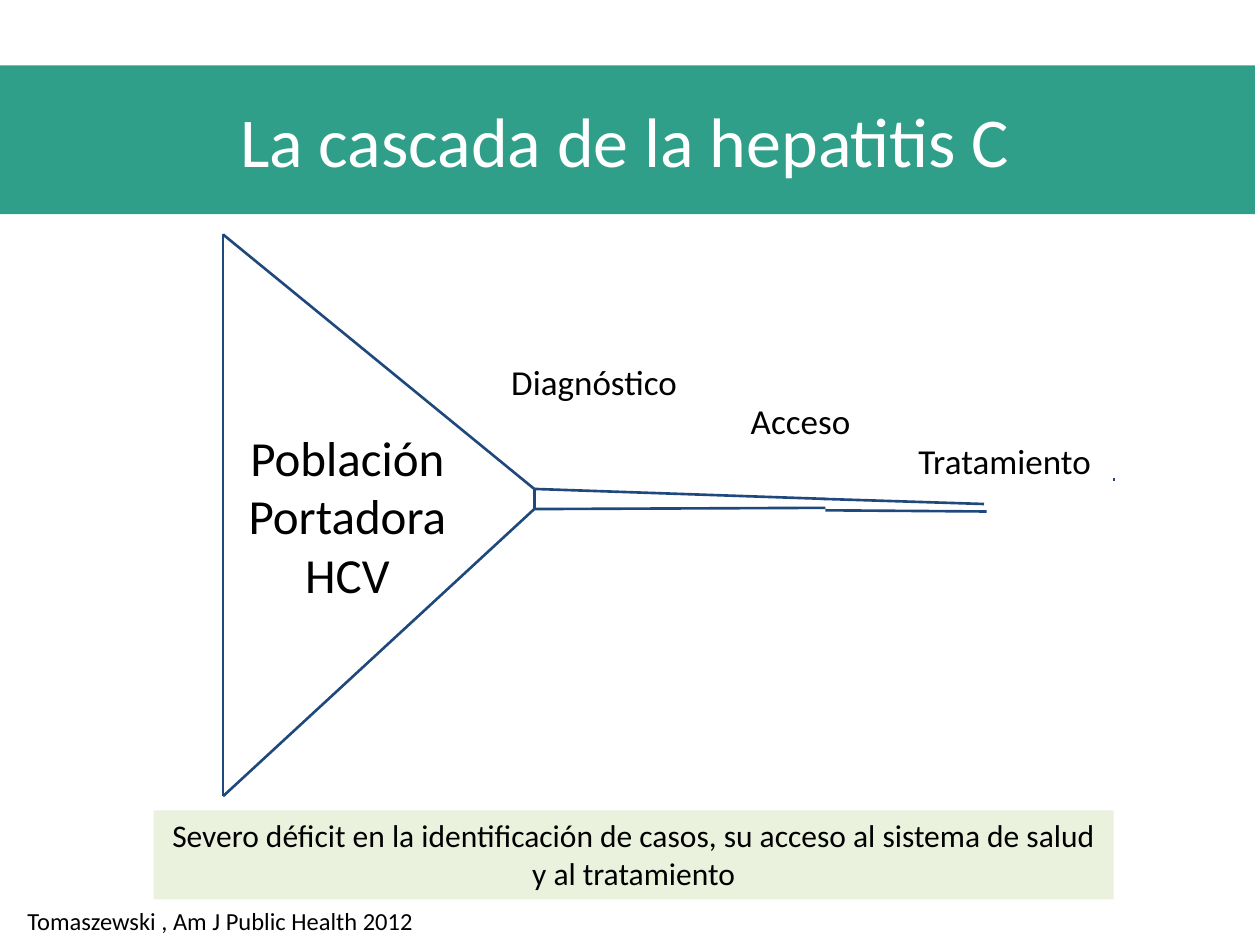
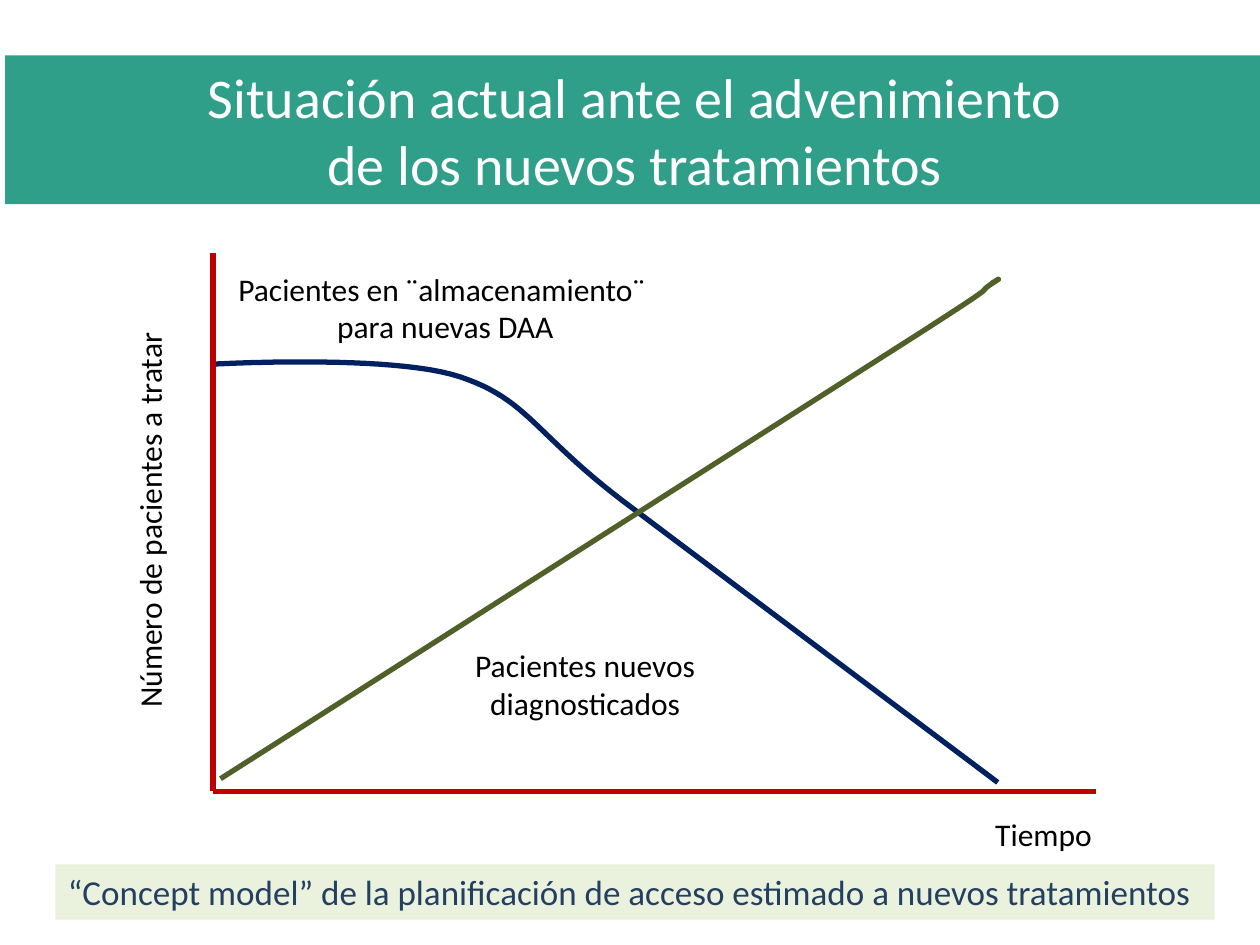
from dataclasses import dataclass

from lxml import etree
from pptx import Presentation
from pptx.dml.color import RGBColor
from pptx.enum.shapes import MSO_CONNECTOR, MSO_SHAPE
from pptx.enum.text import MSO_ANCHOR, MSO_AUTO_SIZE, PP_ALIGN
from pptx.oxml.ns import qn
from pptx.shapes.base import BaseShape
from pptx.slide import Slide
from pptx.util import Pt

LEFT, CENTER = PP_ALIGN.LEFT, PP_ALIGN.CENTER
TOP, MIDDLE = MSO_ANCHOR.TOP, MSO_ANCHOR.MIDDLE
NO_AUTOFIT = MSO_AUTO_SIZE.NONE
STRAIGHT = MSO_CONNECTOR.STRAIGHT
RECTANGLE = MSO_SHAPE.RECTANGLE

FONT = "Calibri"
COLORS = {
    "band": "2F9F8A",
    "panel": "EAF1DD",
    "white": "FFFFFF",
    "black": "000000",
    "funnel": "1F497D",
    "axis": "C00000",
    "stored": "002060",
    "diagnosed": "4F6128",
    "model": "244061",
}
TITLE_ONLY = 5
SLIDE_WIDTH, SLIDE_HEIGHT = 720, 540
BAND_HEIGHT = 85
CURVE_STEPS = 24

Point = tuple[float, float]
Cubic = tuple[Point, Point, Point]


@dataclass(frozen=True)
class Label:
    text: str
    left: float
    top: float
    width: float
    height: float
    size: float = 18
    color: str = "black"
    align: PP_ALIGN = CENTER
    rotation: float = 0
    panel: bool = False


@dataclass(frozen=True)
class Segment:
    start: Point
    end: Point
    color: str = "funnel"
    weight: float = 1.5


@dataclass(frozen=True)
class Curve:
    start: Point
    straight_to: Point
    cubics: tuple[Cubic, ...]
    color: str


WIDE_TOP, WIDE_BOTTOM = (127.5, 134), (127.5, 455)
NECK_TOP, NECK_BOTTOM = (305.3, 279.4), (305.3, 290.9)
FUNNEL = [
    Segment(WIDE_TOP, NECK_TOP),
    Segment(WIDE_BOTTOM, NECK_BOTTOM),
    Segment(WIDE_TOP, WIDE_BOTTOM),
    Segment(NECK_TOP, (471.6, 285.1)),
    Segment(NECK_BOTTOM, (471.6, 290.2)),
    Segment(NECK_TOP, NECK_BOTTOM),
    Segment((470.2, 285.1), (562.3, 288)),
    Segment((471.6, 291.6), (563.8, 292.3)),
    Segment((636.5, 272.9), (636.5, 275)),
]
CASCADE_LABELS = [
    Label("Diagnóstico", 268.6, 202.3, 141.8, 31.7, size=20),
    Label("Acceso", 415.4, 224.6, 84.2, 31.7, size=20),
    Label("Tratamiento", 517.7, 247.7, 113.8, 31.7, size=20, align=LEFT),
    Label("Población\nPortadora\nHCV", 134, 240.5, 129, 108.7, size=28),
    Label("Tomaszewski , Am J Public Health 2012", 8.6, 514, 344, 24.5, size=14, align=LEFT),
    Label(
        "Severo déficit en la identificación de casos, su acceso al sistema de salud\n"
        "y al tratamiento",
        87.8, 463, 548.6, 51, panel=True,
    ),
]

ORIGIN = (121.7, 452.2)
AXES = [
    Segment((ORIGIN[0], 144.7), ORIGIN, "axis", 3),
    Segment(ORIGIN, (626.4, ORIGIN[1]), "axis", 3),
]
CURVES = [
    Curve(
        (570.2, 447.1),
        (356.4, 286.6),
        (
            ((305.3, 247.7), (301.7, 228.2), (262.8, 215.3)),
            ((223.9, 202.3), (121.7, 208.1), (121.7, 208.1)),
        ),
        "stored",
    ),
    Curve(
        (126, 445),
        (506.9, 202.3),
        (
            ((580.3, 155.5), (555.8, 169.9), (565.9, 162.7)),
            ((576, 156.2), (566.6, 162), (566.6, 162)),
        ),
        "diagnosed",
    ),
]
MODEL_LABELS = [
    Label("Pacientes en ¨almacenamiento¨ \npara nuevas DAA", 127.4, 150.5, 254.2, 51),
    Label("Pacientes nuevos\ndiagnosticados", 263.5, 365.8, 141.8, 51),
    Label("Tiempo", 561.6, 462.2, 70.6, 28.8, align=LEFT),
    Label("Número de pacientes a tratar", -30.2, 281.5, 231.1, 28.8, align=LEFT, rotation=270),
    Label(
        "“Concept model” de la planificación de acceso estimado a nuevos tratamientos",
        31.7, 493.9, 662.4, 31.7, size=20, color="model", align=LEFT, panel=True,
    ),
]


def rgb(name: str) -> RGBColor:
    return RGBColor.from_string(COLORS[name])


def write_text(
    shape: BaseShape, text: str, *, size: float, color: str,
    align: PP_ALIGN = CENTER, anchor: MSO_ANCHOR = TOP,
) -> None:
    frame = shape.text_frame
    frame.word_wrap = True
    frame.auto_size = NO_AUTOFIT
    frame.vertical_anchor = anchor
    frame.margin_left = frame.margin_right = Pt(7.2)
    frame.margin_top = frame.margin_bottom = Pt(3.6)
    frame.text = text
    for paragraph in frame.paragraphs:
        paragraph.alignment = align
        for run in paragraph.runs:
            run.font.name = FONT
            run.font.size = Pt(size)
            run.font.color.rgb = rgb(color)


def add_titled_slide(
    presentation: Presentation, title: str, left: float, top: float, size: float
) -> Slide:
    slide = presentation.slides.add_slide(presentation.slide_layouts[TITLE_ONLY])
    band = slide.shapes.title
    band.left, band.top = Pt(left), Pt(top)
    band.width, band.height = Pt(SLIDE_WIDTH), Pt(BAND_HEIGHT)
    band.fill.solid()
    band.fill.fore_color.rgb = rgb("band")
    write_text(band, title, size=size, color="white", anchor=MIDDLE)
    return slide


def draw_label(slide: Slide, label: Label) -> None:
    box = [Pt(value) for value in (label.left, label.top, label.width, label.height)]
    if label.panel:
        shape = slide.shapes.add_shape(RECTANGLE, *box)
        shape.shadow.inherit = False
        shape.fill.solid()
        shape.fill.fore_color.rgb = rgb("panel")
        shape.line.fill.background()
    else:
        shape = slide.shapes.add_textbox(*box)
    shape.rotation = label.rotation
    write_text(shape, label.text, size=label.size, color=label.color, align=label.align)


def draw_segment(slide: Slide, segment: Segment) -> None:
    ends = [Pt(value) for value in (*segment.start, *segment.end)]
    connector = slide.shapes.add_connector(STRAIGHT, *ends)
    connector.line.color.rgb = rgb(segment.color)
    connector.line.width = Pt(segment.weight)
    etree.SubElement(connector._element.spPr, qn("a:effectLst"))


def cubic_points(start: Point, cubic: Cubic) -> list[Point]:
    points = []
    for step in range(1, CURVE_STEPS + 1):
        t = step / CURVE_STEPS
        weights = ((1 - t) ** 3, 3 * t * (1 - t) ** 2, 3 * t**2 * (1 - t), t**3)
        x, y = (
            sum(weight * value for weight, value in zip(weights, axis))
            for axis in zip(start, *cubic)
        )
        points.append((x, y))
    return points


def draw_curve(slide: Slide, curve: Curve) -> None:
    points = [curve.straight_to]
    for cubic in curve.cubics:
        points += cubic_points(points[-1], cubic)
    builder = slide.shapes.build_freeform(Pt(curve.start[0]), Pt(curve.start[1]))
    builder.add_line_segments([(Pt(x), Pt(y)) for x, y in points], close=False)
    shape = builder.convert_to_shape()
    shape.shadow.inherit = False
    shape.fill.background()
    shape.line.color.rgb = rgb(curve.color)
    shape.line.width = Pt(3)


def build_cascade(presentation: Presentation) -> None:
    slide = add_titled_slide(presentation, "La cascada de la hepatitis C", -2.9, 37.4, 40)
    for segment in FUNNEL:
        draw_segment(slide, segment)
    for label in CASCADE_LABELS:
        draw_label(slide, label)


def build_access_model(presentation: Presentation) -> None:
    title = "Situación actual ante el advenimiento\nde los nuevos tratamientos"
    slide = add_titled_slide(presentation, title, 2.9, 31.7, 32)
    stored, diagnosed = CURVES
    draw_curve(slide, stored)
    for axis in AXES:
        draw_segment(slide, axis)
    draw_curve(slide, diagnosed)
    for label in MODEL_LABELS:
        draw_label(slide, label)


def main() -> None:
    presentation = Presentation()
    presentation.slide_width = Pt(SLIDE_WIDTH)
    presentation.slide_height = Pt(SLIDE_HEIGHT)
    build_cascade(presentation)
    build_access_model(presentation)
    presentation.save("out.pptx")


if __name__ == "__main__":
    main()
